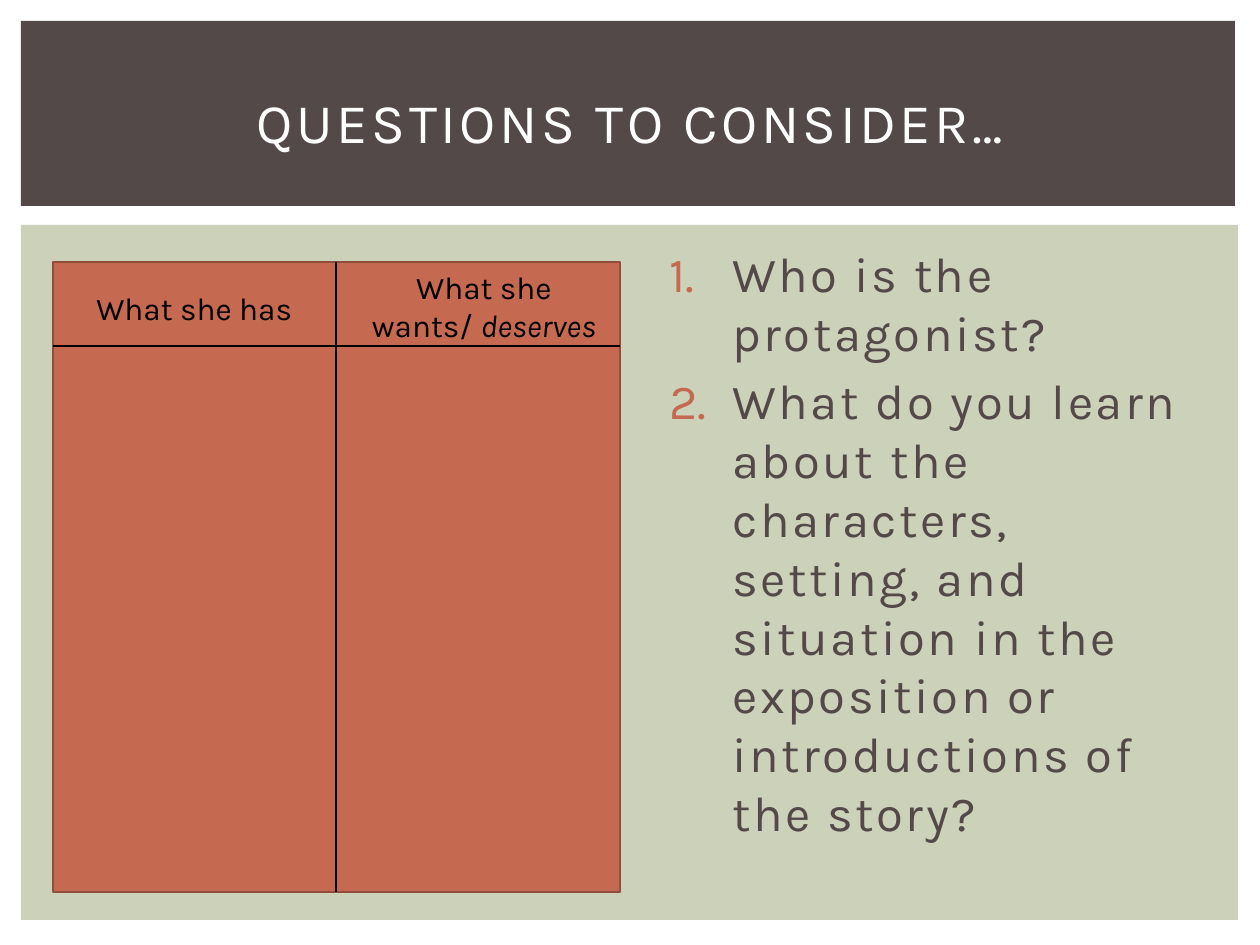
from dataclasses import dataclass

from lxml.etree import SubElement
from pptx import Presentation
from pptx.dml.color import RGBColor
from pptx.enum.shapes import MSO_CONNECTOR as CONN, MSO_SHAPE as SHAPE
from pptx.enum.text import MSO_ANCHOR as ANCHOR, MSO_AUTO_SIZE as FIT, PP_ALIGN as ALIGN
from pptx.oxml.ns import qn
from pptx.util import Emu, Pt

FONT = "Karla"
BROWN, SAGE, RUST = "534949", "CCD1B9", "C66951"
RUST_DARK, BLACK, WHITE = "924E3C", "000000", "FFFFFF"


@dataclass
class Box:
    x: int
    y: int
    w: int
    h: int


@dataclass
class Style:
    size: int
    color: str
    spacing: int = 0
    align: ALIGN = ALIGN.LEFT
    anchor: ANCHOR = ANCHOR.TOP
    fit: FIT = FIT.NONE


def px(n: int) -> Emu:
    return Emu(round(n * 914400 / 126))


def rgb(color: str) -> RGBColor:
    return RGBColor.from_string(color)


def add_panel(s, box: Box, fill: str, line: str = ""):
    sp = s.shapes.add_shape(SHAPE.RECTANGLE, px(box.x), px(box.y), px(box.w), px(box.h))
    sp.shadow.inherit = False
    sp.fill.solid()
    sp.fill.fore_color.rgb = rgb(fill)
    if line:
        sp.line.color.rgb = rgb(line)
        sp.line.width = Pt(1.5)
    else:
        sp.line.fill.background()


def add_rule(s, x1: int, y1: int, x2: int, y2: int):
    cn = s.shapes.add_connector(CONN.STRAIGHT, px(x1), px(y1), px(x2), px(y2))
    cn.line.color.rgb = rgb(BLACK)
    cn.line.width = Pt(0.79)
    SubElement(cn._element.spPr, qn("a:effectLst"))


def add_text(s, box: Box, paragraphs: list[list[str]], style: Style):
    sp = s.shapes.add_textbox(px(box.x), px(box.y), px(box.w), px(box.h))
    tf = sp.text_frame
    tf.word_wrap = True
    tf.auto_size = style.fit
    tf.vertical_anchor = style.anchor
    for i, parts in enumerate(paragraphs):
        p = tf.add_paragraph() if i else tf.paragraphs[0]
        p.alignment = style.align
        for part in parts:
            r = p.add_run()
            r.text = part
            r.font.name = FONT
            r.font.size = Pt(style.size)
            r.font.color.rgb = rgb(style.color)
            if style.spacing:
                r._r.get_or_add_rPr().set("spc", str(style.spacing))
    return tf


def number(p, color: str):
    p.space_before = Pt(5.6)
    pPr = p._p.get_or_add_pPr()
    pPr.set("marL", str(px(69)))
    pPr.set("indent", str(-px(63)))
    SubElement(SubElement(pPr, qn("a:buClr")), qn("a:srgbClr"), val=color)
    SubElement(pPr, qn("a:buFont"), typeface="+mj-lt")
    SubElement(pPr, qn("a:buAutoNum"), type="arabicPeriod")


def main():
    prs = Presentation()
    prs.slide_width, prs.slide_height = px(1260), px(945)
    s = prs.slides.add_slide(prs.slide_layouts[6])

    add_panel(s, Box(21, 225, 1217, 695), SAGE)
    add_panel(s, Box(21, 21, 1214, 185), BROWN)

    questions = [
        ["Who is the protagonist?"],
        ["What do you learn about the characters, setting, and situation "
         "in the exposition or introductions of the story?"],
    ]
    tf = add_text(s, Box(651, 237, 559, 667), questions, Style(28, BROWN, 150))
    for p in tf.paragraphs:
        number(p, RUST)

    add_text(s, Box(53, 49, 1155, 145), [["QUESTIONS TO CONSIDER…"]],
             Style(32, WHITE, 200, ALIGN.CENTER, ANCHOR.MIDDLE))

    chart = Box(53, 262, 567, 630)
    right, bottom = chart.x + chart.w, chart.y + chart.h
    middle = chart.x + chart.w // 2
    add_panel(s, chart, RUST, RUST_DARK)
    add_rule(s, chart.x, 346, right, 346)
    add_rule(s, middle, chart.y, middle, bottom)

    add_text(s, Box(84, 283, 262, 50), [["What she has"]],
             Style(18, BLACK, fit=FIT.SHAPE_TO_FIT_TEXT))
    tf = add_text(s, Box(353, 262, 262, 89), [["What she wants/ ", "deserves"]],
                  Style(18, BLACK, align=ALIGN.CENTER, fit=FIT.SHAPE_TO_FIT_TEXT))
    tf.paragraphs[0].runs[1].font.italic = True

    prs.save("out.pptx")


if __name__ == "__main__":
    main()
